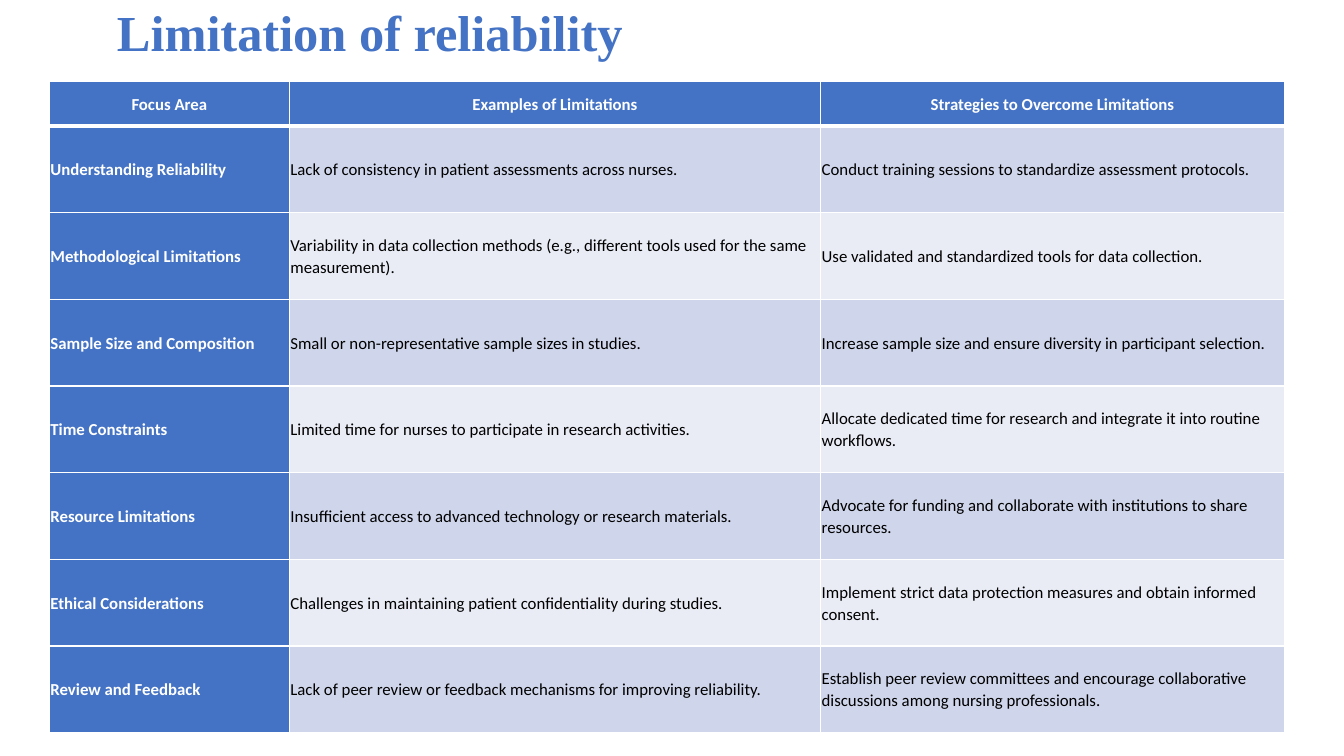
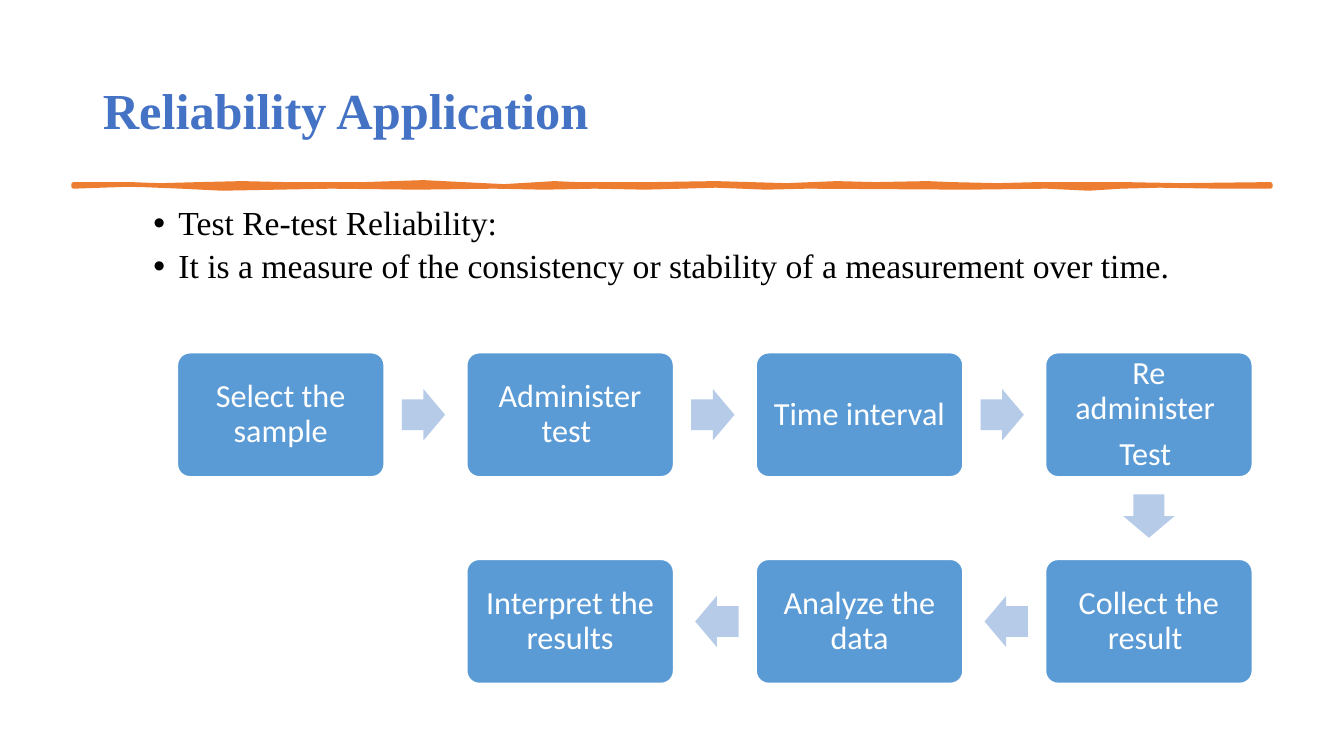
"""Build two slides on the limits and the application of reliability."""
import math

import pptx
import pptx.chart.data
import pptx.dml.color
import pptx.enum.shapes
import pptx.enum.text
import pptx.oxml
import pptx.oxml.ns
import pptx.util

Inches = pptx.util.Inches
Pt = pptx.util.Pt
RGBColor = pptx.dml.color.RGBColor
Align = pptx.enum.text.PP_ALIGN
Anchor = pptx.enum.text.MSO_ANCHOR
Shape = pptx.enum.shapes.MSO_SHAPE

BLUE = RGBColor(0x44, 0x72, 0xC4)
STEP_BLUE = RGBColor(0x5B, 0x9B, 0xD5)
ARROW_BLUE = RGBColor(0xB5, 0xCB, 0xE7)
ORANGE = RGBColor(0xED, 0x7D, 0x31)
BANDS = (RGBColor(0xCF, 0xD5, 0xEA), RGBColor(0xE9, 0xEB, 0xF5))
WHITE = RGBColor(0xFF, 0xFF, 0xFF)
BLACK = RGBColor(0, 0, 0)

TITLE_FONT = {"name": "Times New Roman", "size": Pt(36), "bold": True, "color": BLUE}
BODY_FONT = {"name": "Times New Roman", "size": Pt(24), "color": BLACK}
STEP_FONT = {"name": "Calibri", "size": Pt(23), "color": WHITE}
HEADING_FONT = {"name": "Calibri", "size": Pt(12), "bold": True, "color": WHITE}
CELL_FONT = {"name": "Calibri", "size": Pt(12), "bold": False, "color": BLACK}

TITLE_PARAGRAPH = {"alignment": Align.LEFT, "line_spacing": 0.9}
BODY_PARAGRAPH = {"level": 1, "alignment": Align.LEFT, "line_spacing": 0.9,
                  "space_before": Pt(5)}
STEP_PARAGRAPH = {"alignment": Align.CENTER, "line_spacing": 0.9, "space_after": Pt(8)}
CELL_PARAGRAPH = {"line_spacing": 1.07, "space_after": Pt(8)}

LIMITATIONS = [
    ("Focus Area", "Examples of Limitations", "Strategies to Overcome Limitations"),
    ("Understanding Reliability",
     "Lack of consistency in patient assessments across nurses.",
     "Conduct training sessions to standardize assessment protocols."),
    ("Methodological Limitations",
     "Variability in data collection methods (e.g., different tools used for the same "
     "measurement).",
     "Use validated and standardized tools for data collection."),
    ("Sample Size and Composition",
     "Small or non-representative sample sizes in studies.",
     "Increase sample size and ensure diversity in participant selection."),
    ("Time Constraints",
     "Limited time for nurses to participate in research activities.",
     "Allocate dedicated time for research and integrate it into routine workflows."),
    ("Resource Limitations",
     "Insufficient access to advanced technology or research materials.",
     "Advocate for funding and collaborate with institutions to share resources."),
    ("Ethical Considerations",
     "Challenges in maintaining patient confidentiality during studies.",
     "Implement strict data protection measures and obtain informed consent."),
    ("Review and Feedback",
     "Lack of peer review or feedback mechanisms for improving reliability.",
     "Establish peer review committees and encourage collaborative discussions among "
     "nursing professionals."),
]
COLUMN_WIDTHS = (2.38, 5.27, 4.6)
HEADER_HEIGHT, ROW_HEIGHT = 0.44, 0.86

BULLETS = [
    "Test Re-test Reliability:",
    "It is a measure of the consistency or stability of a measurement over time.",
]
STEPS = [
    (0, 0, ["Select the sample"]),
    (1, 0, ["Administer test "]),
    (2, 0, ["Time interval "]),
    (3, 0, ["Re administer ", "Test "]),
    (3, 1, ["Collect the result "]),
    (2, 1, ["Analyze the data"]),
    (1, 1, ["Interpret the results"]),
]
STEP_LEFT, STEP_TOP = 1.76, 3.5
STEP_WIDTH, STEP_HEIGHT = 2.05, 1.23
COLUMN_PITCH, ROW_PITCH = 2.87, 2.05
ARROW_LENGTH, ARROW_BREADTH, ARROW_DISTANCE = 0.43, 0.51, 0.39

STROKE_TOP = [
    (0.73, 1.83), (1.24, 1.83), (1.6, 1.84), (1.98, 1.83), (2.4, 1.82), (2.84, 1.83),
    (3.61, 1.83), (4.2, 1.81), (4.59, 1.83), (5, 1.85), (5.5, 1.82), (5.72, 1.83),
    (6.46, 1.83), (7.1, 1.82), (7.44, 1.83), (7.8, 1.84), (8.3, 1.82), (8.68, 1.83),
    (9.2, 1.82), (9.43, 1.83), (9.9, 1.84), (10.29, 1.83), (11.15, 1.83),
    (11.7, 1.84), (12.6, 1.83),
]
STROKE_BOTTOM = [
    (12.6, 1.85), (12.1, 1.85), (11.5, 1.84), (11.12, 1.85), (10.8, 1.87),
    (10.38, 1.85), (9.6, 1.86), (8, 1.85), (7.6, 1.86), (7.1, 1.84), (6.76, 1.85),
    (6.4, 1.86), (5.9, 1.85), (5.4, 1.86), (4.9, 1.85), (4.14, 1.86), (3.28, 1.85),
    (2.2, 1.87), (1.8, 1.85), (1.3, 1.83), (0.73, 1.85),
]


def set_attributes(target, values):
    for name, value in values.items():
        setattr(target, name, value)


def place(shape, left, top, width, height):
    set_attributes(shape, {"left": Inches(left), "top": Inches(top),
                           "width": Inches(width), "height": Inches(height)})


def write(text_frame, lines, font_values, paragraph_values):
    for index, line in enumerate(lines):
        paragraph = text_frame.paragraphs[0] if index == 0 else text_frame.add_paragraph()
        set_attributes(paragraph, paragraph_values)
        run = paragraph.add_run()
        run.text = line
        for name, value in font_values.items():
            if name == "color":
                run.font.color.rgb = value
            else:
                setattr(run.font, name, value)


def fill_solid(target, color):
    target.fill.solid()
    target.fill.fore_color.rgb = color


def add_titled_slide(presentation, layout_index, title, top, height, margin_left):
    slide = presentation.slides.add_slide(presentation.slide_layouts[layout_index])
    shape = slide.shapes.title
    place(shape, 0.92, top, 11.5, height)
    set_attributes(shape.text_frame, {
        "auto_size": pptx.enum.text.MSO_AUTO_SIZE.NONE, "word_wrap": True,
        "vertical_anchor": Anchor.MIDDLE, "margin_left": Inches(margin_left)})
    write(shape.text_frame, [title], TITLE_FONT, TITLE_PARAGRAPH)
    return slide


def add_cell_borders(cell, bottom_width):
    properties = cell._tc.get_or_add_tcPr()
    for side, width in (("L", 1), ("R", 1), ("T", 1), ("B", bottom_width)):
        properties.append(pptx.oxml.parse_xml(
            f'<a:ln{side} {pptx.oxml.ns.nsdecls("a")} w="{Pt(width)}">'
            f'<a:solidFill><a:srgbClr val="{WHITE}"/></a:solidFill></a:ln{side}>'))


def add_limitations_table(slide):
    heights = [HEADER_HEIGHT] + [ROW_HEIGHT] * (len(LIMITATIONS) - 1)
    table = slide.shapes.add_table(
        len(LIMITATIONS), len(COLUMN_WIDTHS), Inches(0.49), Inches(0.81),
        Inches(sum(COLUMN_WIDTHS)), Inches(sum(heights))).table
    for column, width in zip(table.columns, COLUMN_WIDTHS):
        column.width = Inches(width)
    for row_index, texts in enumerate(LIMITATIONS):
        table.rows[row_index].height = Inches(heights[row_index])
        is_header = row_index == 0
        alignment = Align.CENTER if is_header else Align.LEFT
        for column_index, text in enumerate(texts):
            cell = table.cell(row_index, column_index)
            is_heading = is_header or column_index == 0
            set_attributes(cell, {"vertical_anchor": Anchor.MIDDLE} | {
                f"margin_{side}": Inches(0.01)
                for side in ("left", "top", "right", "bottom")})
            write(cell.text_frame, [text], HEADING_FONT if is_heading else CELL_FONT,
                  CELL_PARAGRAPH | {"alignment": alignment})
            add_cell_borders(cell, 3 if is_header else 1)
            fill_solid(cell, BLUE if is_heading else BANDS[(row_index - 1) % 2])


def add_brush_stroke(slide):
    points = [(Inches(x), Inches(y)) for x, y in STROKE_TOP + STROKE_BOTTOM]
    builder = slide.shapes.build_freeform(*points[0])
    builder.add_line_segments(points[1:], close=True)
    stroke = builder.convert_to_shape()
    stroke.shadow.inherit = False
    fill_solid(stroke, ORANGE)
    stroke.line.color.rgb = ORANGE
    stroke.line.width = Pt(3.25)


def add_bullets(slide):
    body = slide.placeholders[1]
    place(body, 0.92, 2, 11.5, 4.76)
    body.text_frame.auto_size = pptx.enum.text.MSO_AUTO_SIZE.NONE
    write(body.text_frame, BULLETS, BODY_FONT, BODY_PARAGRAPH)
    for paragraph in body.text_frame.paragraphs:
        properties = paragraph._p.get_or_add_pPr()
        properties.set("marL", str(Inches(0.75)))
        properties.set("indent", str(Inches(-0.25)))
        for bullet in ('buFont {} typeface="Arial"', 'buChar {} char="•"'):
            properties.append(pptx.oxml.parse_xml(
                f'<a:{bullet.format(pptx.oxml.ns.nsdecls("a"))}/>'))


def add_flow_shape(slide, kind, center, size, color, adjustments):
    shape = slide.shapes.add_shape(
        kind, Inches(center[0] - size[0] / 2), Inches(center[1] - size[1] / 2),
        Inches(size[0]), Inches(size[1]))
    shape.shadow.inherit = False
    fill_solid(shape, color)
    shape.line.fill.background()
    for index, value in enumerate(adjustments):
        shape.adjustments[index] = value
    return shape


def add_flow(slide):
    centers = [(STEP_LEFT + column * COLUMN_PITCH + STEP_WIDTH / 2,
                STEP_TOP + row * ROW_PITCH + STEP_HEIGHT / 2) for column, row, _ in STEPS]
    for index, (column, row, lines) in enumerate(STEPS):
        x, y = centers[index]
        box = add_flow_shape(slide, Shape.ROUNDED_RECTANGLE, (x, y),
                             (STEP_WIDTH, STEP_HEIGHT), STEP_BLUE, [0.1])
        box.line.color.rgb = WHITE
        box.line.width = Pt(1)
        set_attributes(box.text_frame, {
            "word_wrap": True, "vertical_anchor": Anchor.MIDDLE,
            "margin_left": Inches(0.12), "margin_right": Inches(0.12)})
        write(box.text_frame, lines, STEP_FONT, STEP_PARAGRAPH)
        if index + 1 < len(STEPS):
            across = STEPS[index + 1][0] - column
            down = STEPS[index + 1][1] - row
            center = (x + across * (STEP_WIDTH / 2 + ARROW_DISTANCE),
                      y + down * (STEP_HEIGHT / 2 + ARROW_DISTANCE))
            arrow = add_flow_shape(slide, Shape.RIGHT_ARROW, center,
                                   (ARROW_LENGTH, ARROW_BREADTH), ARROW_BLUE, [0.6, 0.5])
            arrow.rotation = math.degrees(math.atan2(down, across))


def main():
    presentation = pptx.Presentation()
    set_attributes(presentation, {"slide_width": Inches(13.33), "slide_height": Inches(7.5)})
    limitations = add_titled_slide(presentation, 5, "Limitation of reliability", 0, 0.7, 0.24)
    add_limitations_table(limitations)
    application = add_titled_slide(presentation, 1, "Reliability Application", 0.4, 1.45, 0.1)
    add_brush_stroke(application)
    add_bullets(application)
    add_flow(application)
    presentation.save("out.pptx")


if __name__ == "__main__":
    main()
